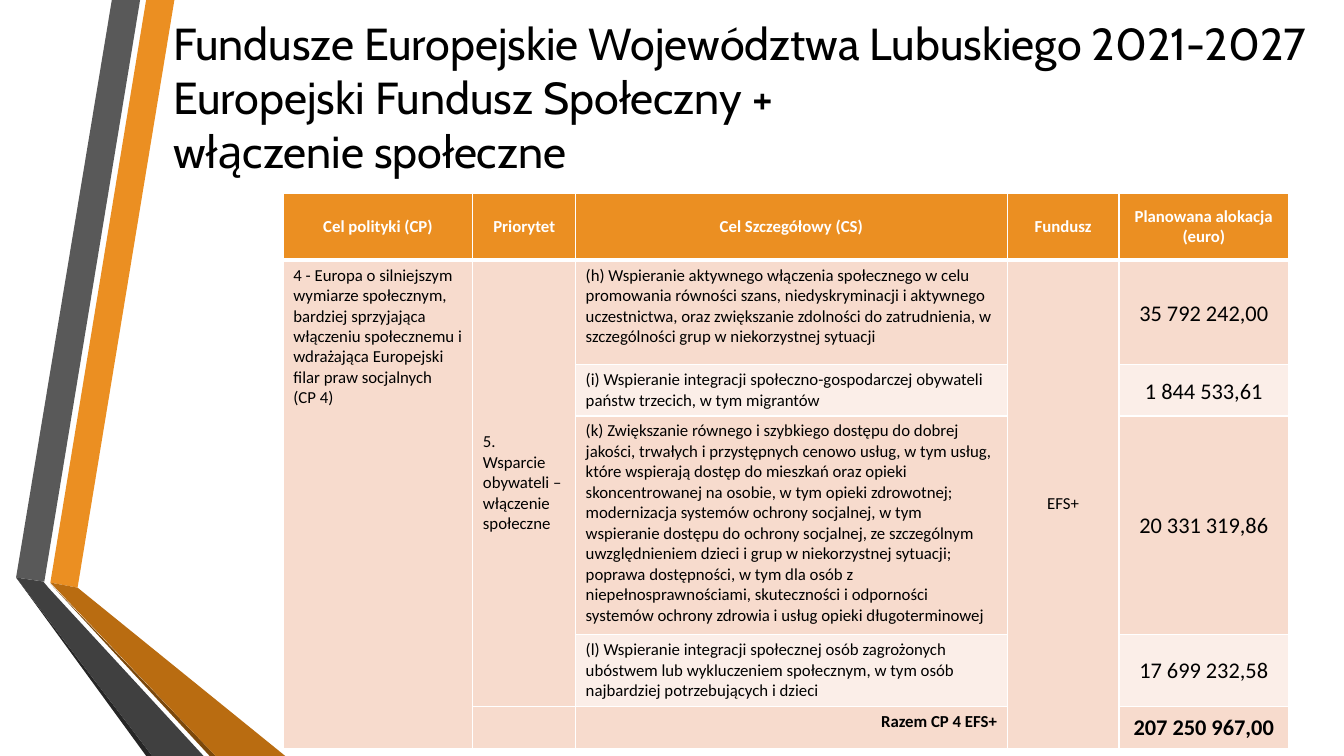
from lxml.etree import SubElement
from pptx import Presentation
from pptx.dml.color import RGBColor
from pptx.enum.text import MSO_ANCHOR as ANCHOR, PP_ALIGN as ALIGN
from pptx.oxml.ns import qn
from pptx.util import Emu, Inches, Pt

WIDTH, HEIGHT = 13.33, 7.5
ORANGE, PEACH, PALE = "EB8F22", "F7DBCD", "FBEEE8"
WHITE, BLACK = "FFFFFF", "000000"

RIBBONS = [
    (ORANGE, [(0.5, 5.78), (0.77, 5.83), (1.73, 0), (1.45, 0)]),
    ("595959", [(1.39, 0), (1.11, 0), (0.16, 5.73), (0.44, 5.77)]),
    ("262626", [(0.16, 5.73), (1.45, HEIGHT), (1.51, HEIGHT)]),
    ("7B480B", [(0.5, 5.79), (2.08, HEIGHT), (2.14, HEIGHT)]),
    ("B96C11", [(0.5, 5.78), (2.14, HEIGHT), (2.83, HEIGHT), (0.77, 5.83)]),
    ("404040", [(2.02, HEIGHT), (0.48, 5.83), (0.43, 5.77), (0.16, 5.73), (1.51, HEIGHT)]),
]

TITLE = ("Fundusze Europejskie Województwa Lubuskiego 2021-2027\v"
         "Europejski Fundusz Społeczny +\vwłączenie społeczne")
HEADERS = ["Cel polityki (CP)", "Priorytet", "Cel Szczegółowy (CS)", "Fundusz",
           "Planowana alokacja (euro)"]
POLICY = ("4 - Europa o silniejszym wymiarze społecznym, bardziej sprzyjająca włączeniu "
          "społecznemu i wdrażająca Europejski filar praw socjalnych \v(CP 4)")
PRIORITY = "5.\nWsparcie obywateli – włączenie społeczne"
GOALS = [
    ("(h) Wspieranie aktywnego włączenia społecznego w celu promowania równości szans, "
     "niedyskryminacji i aktywnego uczestnictwa, oraz zwiększanie zdolności do zatrudnienia, "
     "w szczególności grup w niekorzystnej sytuacji", "35 792 242,00"),
    ("(i) Wspieranie integracji społeczno-gospodarczej obywateli państw trzecich, "
     "w tym migrantów", "1 844 533,61"),
    ("(k) Zwiększanie równego i szybkiego dostępu do dobrej jakości, trwałych i przystępnych "
     "cenowo usług, w tym usług, które wspierają dostęp do mieszkań oraz opieki "
     "skoncentrowanej na osobie, w tym opieki zdrowotnej; modernizacja systemów ochrony "
     "socjalnej, w tym wspieranie dostępu do ochrony socjalnej, ze szczególnym "
     "uwzględnieniem dzieci i grup w niekorzystnej sytuacji; poprawa dostępności, w tym dla "
     "osób z niepełnosprawnościami, skuteczności i odporności systemów ochrony zdrowia "
     "i usług opieki długoterminowej", "20 331 319,86"),
    ("(l) Wspieranie integracji społecznej osób zagrożonych ubóstwem lub wykluczeniem "
     "społecznym, w tym osób najbardziej potrzebujących i dzieci", "17 699 232,58"),
]
TOTAL = ("Razem CP 4 EFS+", "207 250 967,00")
COLUMNS = [1.88, 1.02, 4.28, 1.11, 1.68]
ROWS = [0.66, 1.04, 0.47, 2.17, 0.66, 0.42]


def rgb(color):
    return RGBColor.from_string(color)


def format_text(tf, size, font, color=BLACK, bold=False, align=ALIGN.LEFT):
    for p in tf.paragraphs:
        p.alignment = align
        p.font.size = Pt(size)
        for r in p.runs:
            r.font.size, r.font.name, r.font.bold = Pt(size), font, bold
            r.font.color.rgb = rgb(color)


def add_ribbons(slide):
    for color, points in RIBBONS:
        corners = [(Inches(x), Inches(y)) for x, y in points]
        builder = slide.shapes.build_freeform(*corners[0])
        builder.add_line_segments(corners[1:], close=True)
        sp = builder.convert_to_shape()
        sp.shadow.inherit = False
        sp.fill.solid()
        sp.fill.fore_color.rgb = rgb(color)
        sp.line.fill.background()


def add_title(slide, left, top, width, height):
    title = slide.shapes.title
    title.left, title.top = Inches(left), Inches(top)
    title.width, title.height = Inches(width), Inches(height)
    tf = title.text_frame
    tf.text = TITLE
    tf.vertical_anchor = ANCHOR.MIDDLE
    format_text(tf, 32, "Cabin")


def style_cell(cell, fill, top=1, bottom=1):
    """Draw white borders of the given point widths and fill the cell."""
    tc_pr = cell._tc.get_or_add_tcPr()
    for side, width in (("L", 1), ("R", 1), ("T", top), ("B", bottom)):
        ln = SubElement(tc_pr, qn("a:ln" + side), w=str(Pt(width)))
        SubElement(SubElement(ln, qn("a:solidFill")), qn("a:srgbClr"), val=WHITE)
    cell.fill.solid()
    cell.fill.fore_color.rgb = rgb(fill)


def write_cell(cell, text, size=12, anchor=ANCHOR.MIDDLE, **style):
    cell.text_frame.text = text
    cell.vertical_anchor = anchor
    format_text(cell.text_frame, size, "Calibri", **style)


def add_allocation_table(slide, left, top):
    frame = slide.shapes.add_table(len(ROWS), len(COLUMNS), Inches(left), Inches(top),
                                   Inches(sum(COLUMNS)), Inches(sum(ROWS)))
    table = frame.table
    for column, width in zip(table.columns, COLUMNS):
        column.width = Inches(width)
    for row, height in zip(table.rows, ROWS):
        row.height = Inches(height)

    last = len(ROWS) - 1
    for i in range(len(ROWS)):
        for j in range(len(COLUMNS)):
            banded = i in (2, 4) and j in (2, 4)
            fill = ORANGE if i == 0 else PALE if banded else PEACH
            style_cell(table.cell(i, j), fill, top=3 if i == 1 else 1,
                       bottom=3 if i == 0 else 1)
    for j, bottom in ((0, last), (1, last - 1), (3, last)):
        table.cell(1, j).merge(table.cell(bottom, j))

    for j, header in enumerate(HEADERS):
        write_cell(table.cell(0, j), header, color=WHITE, bold=True, align=ALIGN.CENTER)
    write_cell(table.cell(1, 0), POLICY, anchor=ANCHOR.TOP)
    write_cell(table.cell(1, 1), PRIORITY)
    write_cell(table.cell(1, 3), "EFS+", align=ALIGN.CENTER)
    for i, (goal, amount) in enumerate(GOALS + [TOTAL], start=1):
        is_total = i == last
        write_cell(table.cell(i, 2), goal, anchor=ANCHOR.TOP, bold=is_total,
                   align=ALIGN.RIGHT if is_total else ALIGN.LEFT)
        value = table.cell(i, 4)
        write_cell(value, amount, size=16, bold=is_total, align=ALIGN.CENTER)
        if i < last - 1:
            value.margin_left = value.margin_right = Inches(0.05)
            value.margin_top = value.margin_bottom = Emu(0)
            value.text_frame.paragraphs[0].line_spacing = 1.07


def main():
    prs = Presentation()
    prs.slide_width, prs.slide_height = Inches(WIDTH), Inches(HEIGHT)
    slide = prs.slides.add_slide(prs.slide_layouts[5])
    add_ribbons(slide)
    add_title(slide, 1.62, 0, WIDTH - 1.62, 1.92)
    add_allocation_table(slide, 2.81, 1.92)
    prs.save("out.pptx")


if __name__ == "__main__":
    main()
